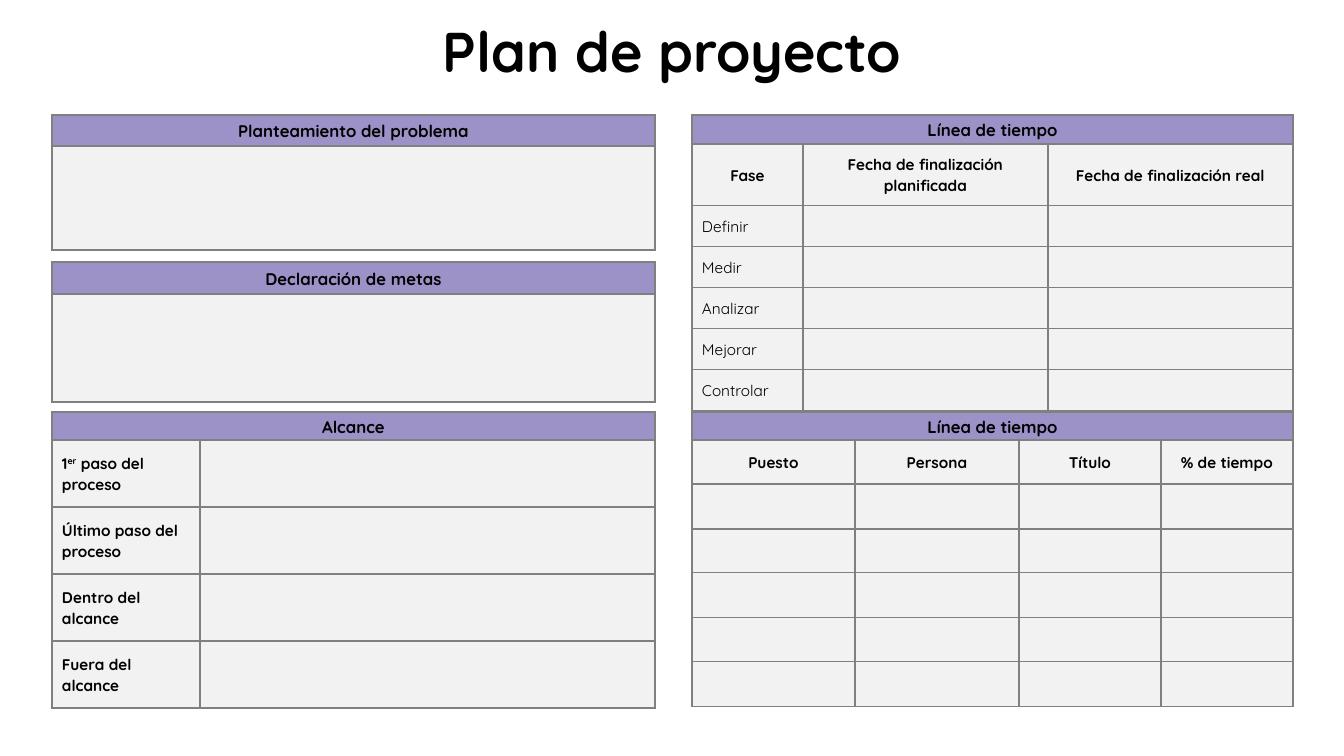
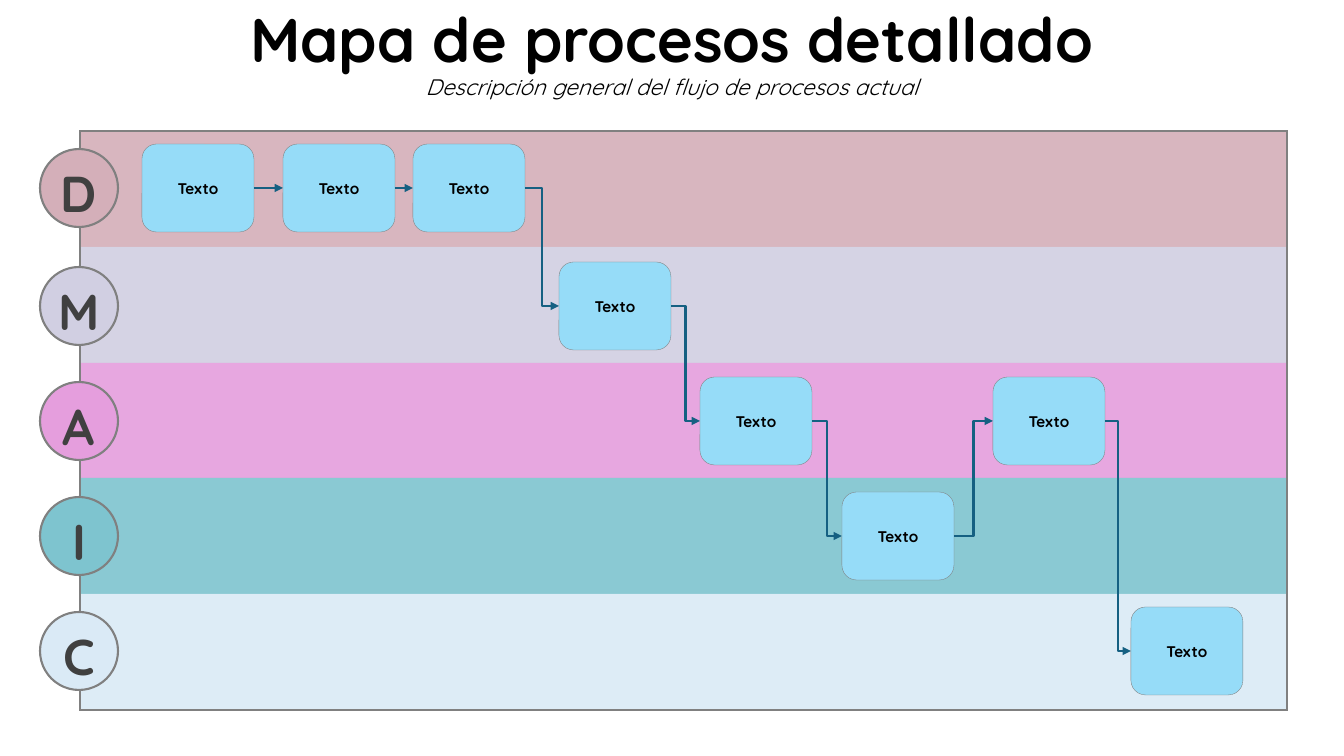
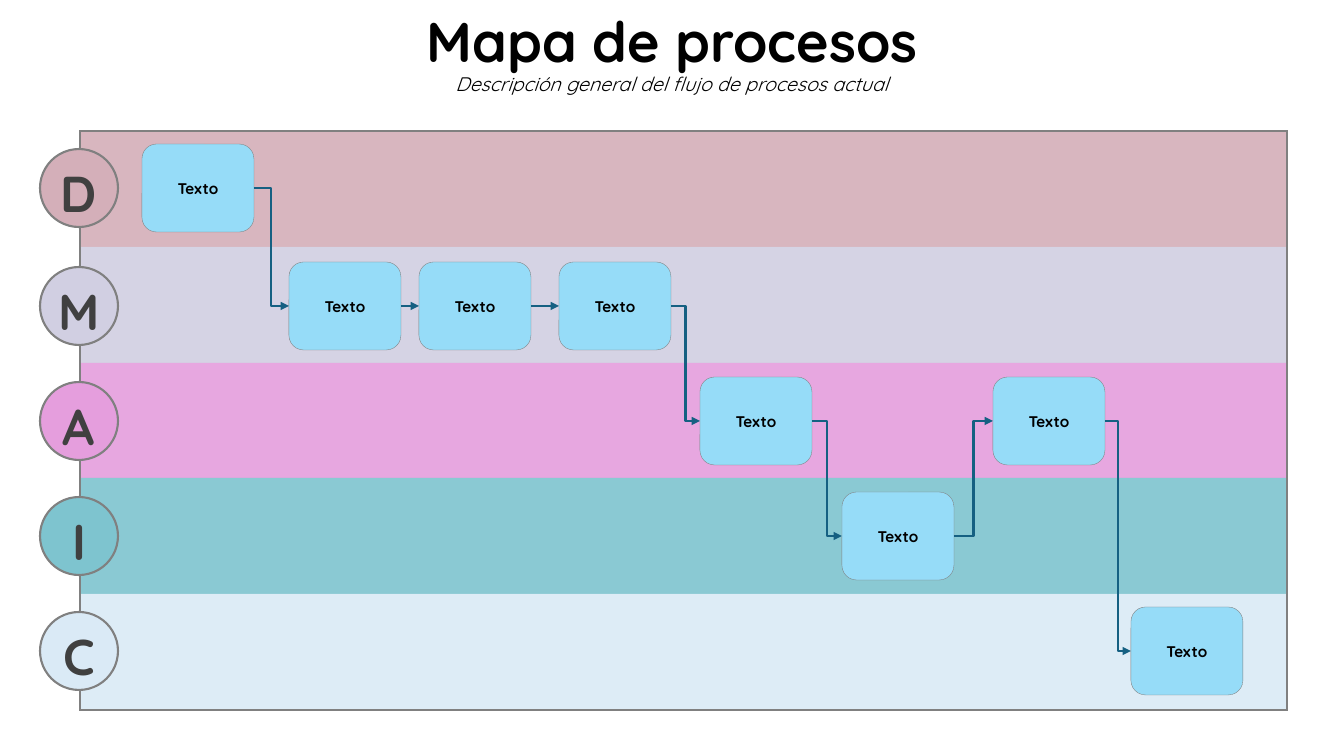
"""Build a project plan slide and two DMAIC process map slides."""
from itertools import pairwise

from lxml.etree import SubElement
from pptx import Presentation
from pptx.dml.color import RGBColor
from pptx.enum.shapes import MSO_CONNECTOR, MSO_SHAPE
from pptx.enum.text import MSO_ANCHOR, MSO_AUTO_SIZE, PP_ALIGN
from pptx.oxml.ns import qn
from pptx.util import Emu, Pt

PX = 12192000 / 1344
FONT = "Quicksand"
BLACK = RGBColor(0x00, 0x00, 0x00)
CHARCOAL = RGBColor(0x40, 0x40, 0x40)
GRAY = RGBColor(0x80, 0x80, 0x80)
PALE = RGBColor(0xF2, 0xF2, 0xF2)
PURPLE = RGBColor(0x9C, 0x92, 0xC8)
SKY = RGBColor(0x96, 0xDC, 0xF8)
ARROW = RGBColor(0x15, 0x60, 0x82)
PINK = RGBColor(0xD4, 0xAF, 0xB9)
LILAC = RGBColor(0xD1, 0xCF, 0xE2)
ORCHID = RGBColor(0xE5, 0x9E, 0xDD)
TEAL = RGBColor(0x7E, 0xC4, 0xCF)
ICE = RGBColor(0xDA, 0xEA, 0xF6)
NO_GRID_STYLE = "{2D5ABB26-0587-4C30-8999-92F81FD0307C}"


def add_run(paragraph, text, size, bold=True, color=BLACK):
    run = paragraph.add_run()
    run.text = text
    run.font.name = FONT
    run.font.size = Pt(size)
    run.font.bold = bold
    run.font.color.rgb = color
    return run


def add_grid(slide, left, top, widths, heights, sides):
    box = [Emu(round(n * PX)) for n in (left, top, sum(widths), sum(heights))]
    table = slide.shapes.add_table(len(heights), len(widths), *box).table
    table.first_row = table.horz_banding = False
    table._tbl.tblPr.find(qn("a:tableStyleId")).text = NO_GRID_STYLE
    for column, width in zip(table.columns, widths):
        column.width = Emu(round(width * PX))
    for row, height, row_sides in zip(table.rows, heights, sides):
        row.height = Emu(round(height * PX))
        for cell in row.cells:
            cell.margin_top = cell.margin_bottom = 0
            cell.vertical_anchor = MSO_ANCHOR.MIDDLE
            properties = cell._tc.get_or_add_tcPr()
            for side in row_sides:
                border = SubElement(properties, qn(f"a:ln{side}"), w=str(Pt(1)))
                fill = SubElement(border, qn("a:solidFill"))
                SubElement(fill, qn("a:srgbClr"), val=str(GRAY))
    return table


presentation = Presentation()
presentation.slide_width = Emu(round(1344 * PX))
presentation.slide_height = Emu(round(756 * PX))

SUBTITLE = "Descripción general del flujo de procesos actual"
TITLES = [
    ("Plan de proyecto", 40, "", 0, 495),
    ("Mapa de procesos detallado", 44, SUBTITLE, 16, 1175),
    ("Mapa de procesos", 40, SUBTITLE, 14, 997),
]
for heading, size, subtitle, subtitle_size, width in TITLES:
    slide = presentation.slides.add_slide(presentation.slide_layouts[5])
    title = slide.shapes.title
    title.left, title.top = Emu(round((1344 - width) / 2 * PX)), 0
    title.width, title.height = Emu(round(width * PX)), Emu(round(109 * PX))
    title.text_frame.auto_size = MSO_AUTO_SIZE.NONE
    title.text_frame.vertical_anchor = MSO_ANCHOR.MIDDLE
    paragraph = title.text_frame.paragraphs[0]
    paragraph.alignment = PP_ALIGN.CENTER
    paragraph.line_spacing = 0.9
    add_run(paragraph, heading, size)
    if subtitle:
        paragraph.add_line_break()
        add_run(paragraph, subtitle, subtitle_size, bold=False).font.italic = True

plan_slide, *map_slides = presentation.slides

PLAN_TABLES = [
    ("Planteamiento del problema", 52, 115, [603], [31, 104], [], []),
    ("Declaración de metas", 52, 262, [603], [32, 108], [], []),
    ("Alcance", 52, 412, [148, 455], [28] + [67] * 4, [],
     ["1|er| paso del proceso", "Último paso del proceso",
      "Dentro del alcance", "Fuera del alcance"]),
    ("Línea de tiempo", 692, 115, [111, 245, 245], [29, 61] + [41] * 5,
     ["Fase", "Fecha de finalización planificada", "Fecha de finalización real"],
     ["Definir", "Medir", "Analizar", "Mejorar", "Controlar"]),
    ("Línea de tiempo", 692, 412, [163, 164, 142, 132], [28] + [44, 45] * 3,
     ["Puesto", "Persona", "Título", "% de tiempo"], []),
]
for heading, left, top, widths, heights, column_heads, row_labels in PLAN_TABLES:
    table = add_grid(plan_slide, left, top, widths, heights, ["LRTB"] * len(heights))
    for cell in table.iter_cells():
        cell.fill.solid()
        cell.fill.fore_color.rgb = PALE
    band = table.cell(0, 0)
    if len(widths) > 1:
        band.merge(table.cell(0, len(widths) - 1))
    band.fill.fore_color.rgb = PURPLE
    band.margin_left = band.margin_right = Emu(round(8 * PX))
    paragraph = band.text_frame.paragraphs[0]
    paragraph.alignment = PP_ALIGN.CENTER
    paragraph.line_spacing = 1.07
    add_run(paragraph, heading, 12)

    first_label_row = 2 if column_heads else 1
    entries = [(1, column, text) for column, text in enumerate(column_heads)]
    entries += [(row, 0, text) for row, text in enumerate(row_labels, first_label_row)]
    for row, column, text in entries:
        is_head = row < first_label_row
        cell = table.cell(row, column)
        cell.margin_left = cell.margin_right = Emu(round(10 * PX))
        cell.margin_top = cell.margin_bottom = Emu(round(10 * PX))
        paragraph = cell.text_frame.paragraphs[0]
        paragraph.alignment = PP_ALIGN.CENTER if is_head else PP_ALIGN.LEFT
        paragraph.line_spacing = 1.07
        for index, part in enumerate(text.split("|")):
            run = add_run(paragraph, part, 11, bold=is_head or not column_heads)
            if index % 2:
                run._r.get_or_add_rPr().set("baseline", "30000")

LANES = [("D", PINK, 144), ("M", LILAC, 262), ("A", ORCHID, 377),
         ("I", TEAL, 492), ("C", ICE, 607)]
LANE_HEIGHTS = [116, 116, 115, 116, 116]
LANE_SIDES = ["LRT", "LR", "LR", "LR", "LRB"]
FINAL_STEPS = [(559, 1), (700, 2), (842, 3), (993, 2), (1131, 4)]
MAP_STEPS = [
    [(142, 0), (283, 0), (413, 0)] + FINAL_STEPS,
    [(142, 0), (289, 1), (419, 1)] + FINAL_STEPS,
]
for slide, steps in zip(map_slides, MAP_STEPS):
    lane_table = add_grid(slide, 80, 131, [1207], LANE_HEIGHTS, LANE_SIDES)
    for cell, (letter, color, step_top) in zip(lane_table.iter_cells(), LANES):
        cell.fill.solid()
        cell.fill.fore_color.rgb = color
        lane_color = cell._tc.tcPr.find(f"{qn('a:solidFill')}/{qn('a:srgbClr')}")
        SubElement(lane_color, qn("a:alpha"), val="90000")

    nodes = [(MSO_SHAPE.OVAL, 40, step_top + 5, 78, 78, color, 1.5, letter, 36, CHARCOAL)
             for letter, color, step_top in LANES]
    nodes += [(MSO_SHAPE.ROUNDED_RECTANGLE, left, LANES[lane][2], 112, 88,
               SKY, 0.25, "Texto", 11, BLACK) for left, lane in steps]
    step_shapes = []
    for kind, left, top, width, height, color, line, text, size, text_color in nodes:
        box = [Emu(round(n * PX)) for n in (left, top, width, height)]
        shape = slide.shapes.add_shape(kind, *box)
        shape.shadow.inherit = False
        shape.fill.solid()
        shape.fill.fore_color.rgb = color
        shape.line.color.rgb = GRAY
        shape.line.width = Pt(line)
        frame = shape.text_frame
        frame.vertical_anchor = MSO_ANCHOR.MIDDLE
        paragraph = frame.paragraphs[0]
        paragraph.alignment = PP_ALIGN.CENTER
        add_run(paragraph, text, size, color=text_color)
        if kind == MSO_SHAPE.OVAL:
            frame.margin_left = frame.margin_right = 0
            frame.margin_top = frame.margin_bottom = 0
            paragraph.line_spacing = 1.15
        else:
            step_shapes.append(shape)

    for start, end in pairwise(step_shapes):
        kind = MSO_CONNECTOR.STRAIGHT if start.top == end.top else MSO_CONNECTOR.ELBOW
        connector = slide.shapes.add_connector(kind, 0, 0, 0, 0)
        connector.begin_connect(start, 3)
        connector.end_connect(end, 1)
        connector.line.color.rgb = ARROW
        connector.line.width = Pt(1.5)
        properties = connector._element.spPr
        SubElement(properties.find(qn("a:ln")), qn("a:tailEnd"), type="triangle")
        SubElement(properties, qn("a:effectLst"))

presentation.save("out.pptx")
